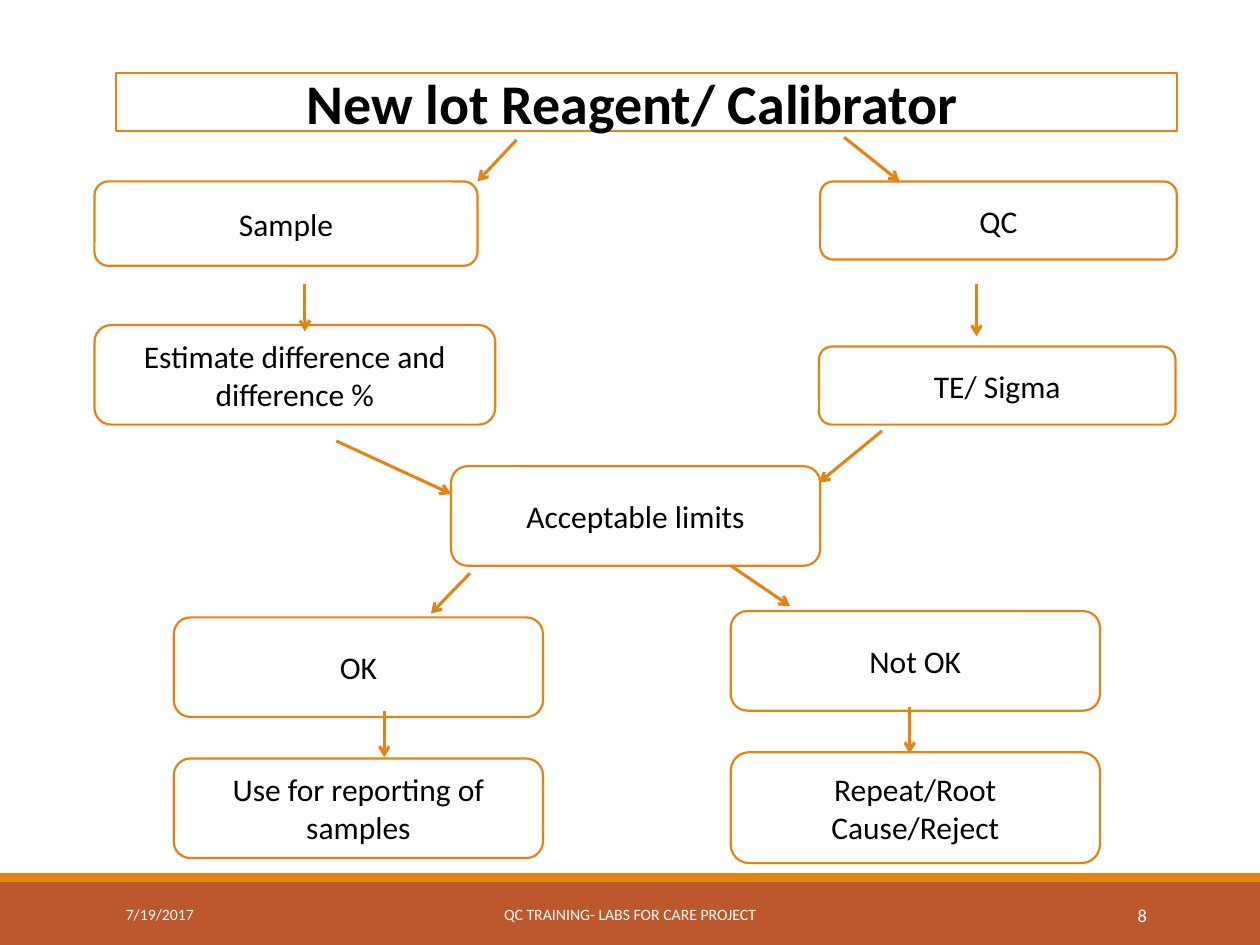
from lxml import etree
from pptx import Presentation
from pptx import util as u
from pptx.dml.color import RGBColor
from pptx.enum import shapes, text
from pptx.oxml.ns import qn

ORANGE, RUST, WHITE, BLACK = "E48312", "BD582C", "FFFFFF", "000000"
RECT = shapes.MSO_SHAPE.RECTANGLE
ROUND = shapes.MSO_SHAPE.ROUNDED_RECTANGLE
LEFT, CENTER, RIGHT = text.PP_ALIGN.LEFT, text.PP_ALIGN.CENTER, text.PP_ALIGN.RIGHT


def rgb(color):
    return RGBColor.from_string(color)


class FlowSlide:
    font = "Calibri"

    def __init__(self, prs):
        self.s = prs.slides.add_slide(prs.slide_layouts[6])

    def add_words(self, sp, words, size, color, align=CENTER, bold=False):
        tf = sp.text_frame
        tf.word_wrap = True
        tf.vertical_anchor = text.MSO_ANCHOR.MIDDLE
        p = tf.paragraphs[0]
        p.alignment = align
        r = p.add_run()
        r.text = words
        r.font.name, r.font.size, r.font.bold = self.font, u.Pt(size), bold
        r.font.color.rgb = rgb(color)

    def shape(self, kind, at, fill, line=None):
        sp = self.s.shapes.add_shape(kind, *map(u.Inches, at))
        sp.shadow.inherit = False
        sp.fill.solid()
        sp.fill.fore_color.rgb = rgb(fill)
        if line:
            sp.line.color.rgb = rgb(line)
            sp.line.width = u.Pt(1.25)
        else:
            sp.line.fill.background()
        return sp

    def step(self, words, *at):
        sp = self.shape(ROUND, at, WHITE, ORANGE)
        self.add_words(sp, words, 18, BLACK)

    def title(self, words, *at):
        sp = self.shape(RECT, at, WHITE, ORANGE)
        sp.text_frame.margin_right = u.Inches(0.32)
        self.add_words(sp, words, 32, BLACK, bold=True)

    def label(self, words, left, width, size, align):
        sp = self.s.shapes.add_textbox(*map(u.Inches, (left, 7.06, width, 0.4)))
        self.add_words(sp, words, size, WHITE, align)

    def arrow(self, *ends):
        sp = self.s.shapes.add_connector(
            shapes.MSO_CONNECTOR.STRAIGHT, *map(u.Inches, ends))
        sp.line.color.rgb = rgb(ORANGE)
        sp.line.width = u.Pt(1.75)
        props = sp._element.spPr
        etree.SubElement(props.find(qn("a:ln")), qn("a:tailEnd"), type="arrow")
        etree.SubElement(props, qn("a:effectLst"))


def main():
    prs = Presentation()
    prs.slide_width, prs.slide_height = u.Inches(10), u.Inches(7.5)
    flow = FlowSlide(prs)

    # Footer bands
    flow.shape(RECT, (0, 7, 10, 0.5), RUST)
    flow.shape(RECT, (0, 6.93, 10, 0.07), ORANGE)

    # Title and steps
    flow.title("New lot Reagent/ Calibrator", 0.92, 0.58, 8.42, 0.46)
    ok, not_ok, width, height = 1.38, 5.8, 2.93, 0.79
    for step in (
        ("Sample", 0.75, 1.44, 3.04, 0.67),
        ("QC", 6.51, 1.44, 2.83, 0.62),
        ("Estimate difference and difference %", 0.75, 2.58, 3.18, height),
        ("TE/ Sigma", 6.5, 2.75, 2.83, 0.62),
        ("Acceptable limits", 3.58, 3.7, width, height),
        ("OK", ok, 4.9, width, height),
        ("Not OK", not_ok, 4.85, width, height),
        ("Use for reporting of samples", ok, 6.02, width, height),
        ("Repeat/Root Cause/Reject", not_ok, 5.97, width, 0.88),
    ):
        flow.step(*step)

    # Arrows, from top to bottom
    for ends in (
        (4.1, 1.11, 3.79, 1.44),
        (6.7, 1.09, 7.14, 1.44),
        (2.42, 2.25, 2.42, 2.63),
        (7.75, 2.25, 7.75, 2.67),
        (2.67, 3.5, 3.58, 3.92),
        (7, 3.42, 6.5, 3.83),
        (3.73, 4.55, 3.42, 4.87),
        (5.8, 4.49, 6.27, 4.81),
        (3.05, 5.64, 3.05, 6.01),
        (7.22, 5.61, 7.22, 5.98),
    ):
        flow.arrow(*ends)

    # Footer text
    flow.label("7/19/2017", 0.9, 2.03, 9, LEFT)
    flow.label("QC TRAINING- LABS FOR CARE PROJECT", 3.02, 3.96, 9, CENTER)
    flow.label("8", 8.12, 1.08, 10.5, RIGHT)

    prs.save("out.pptx")


if __name__ == "__main__":
    main()
